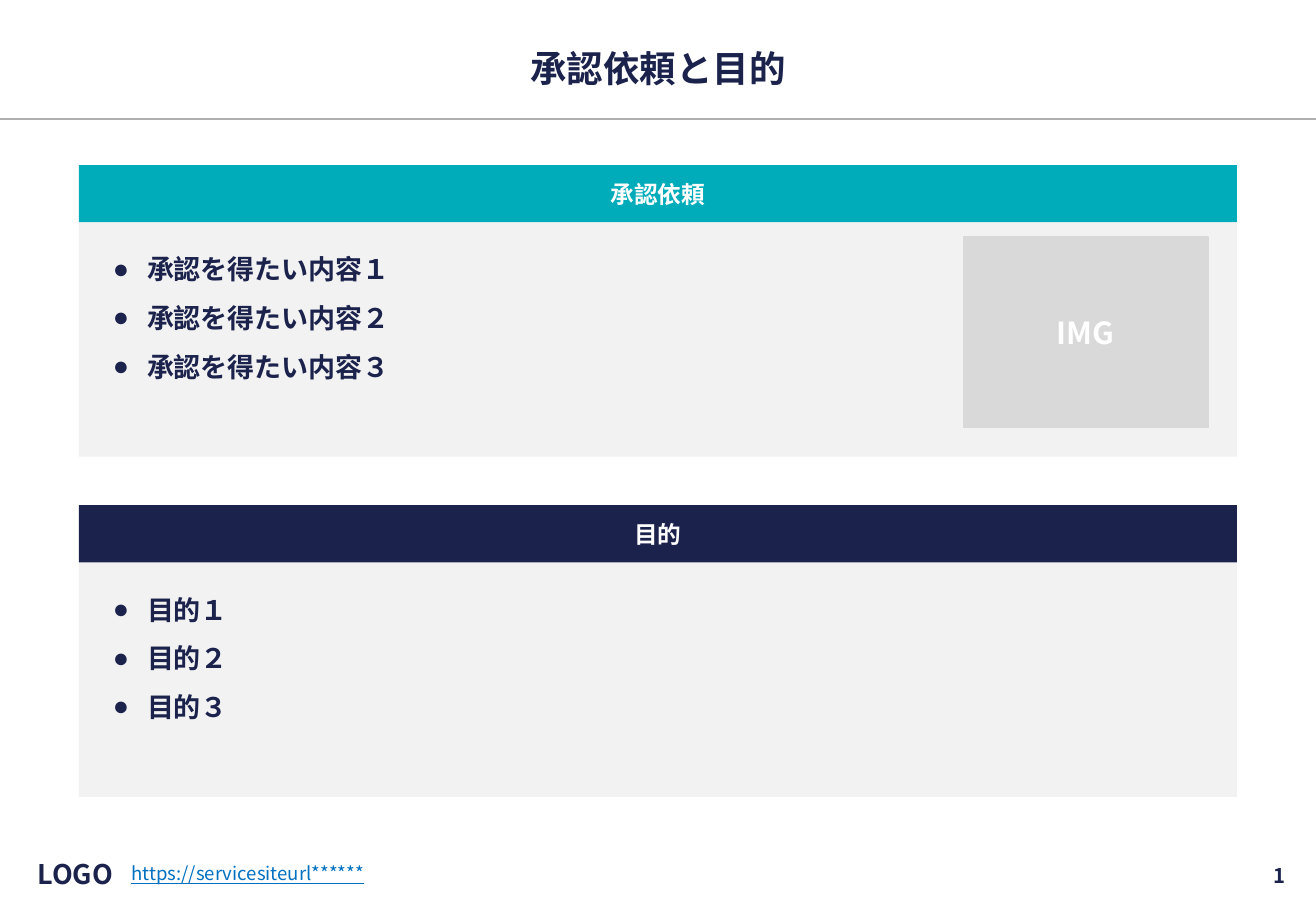
from lxml.etree import SubElement
from pptx import Presentation
from pptx.dml.color import RGBColor
from pptx.enum.shapes import MSO_CONNECTOR, MSO_SHAPE
from pptx.enum.text import MSO_ANCHOR, MSO_AUTO_SIZE, PP_ALIGN
from pptx.oxml import parse_xml
from pptx.oxml.ns import nsdecls, qn
from pptx.util import Pt

PX = 9144  # one hundredth of an inch in EMU
FONT = "Noto Sans CJK JP"
NAVY, TEAL, WHITE = "1B224C", "00ACBA", "FFFFFF"
PANEL, GREY, RULE, LINK = "F2F2F2", "D9D9D9", "AFAFAF", "0070C0"

WIDTH, HEIGHT = 1083, 750
LEFT, CONTENT_WIDTH = 65, 953
HEADER_HEIGHT, PANEL_HEIGHT = 47, 193
SECTION_TOP, SECTION_STEP = 136, 280

SECTIONS = [
    ("承認依頼", TEAL, ["承認を得たい内容１", "承認を得たい内容２", "承認を得たい内容３"]),
    ("目的", NAVY, ["目的１", "目的２", "目的３"]),
]


def px(value):
    return value * PX


def color(value):
    return RGBColor.from_string(value)


def place(shape, left, top, width, height):
    shape.left, shape.top = px(left), px(top)
    shape.width, shape.height = px(width), px(height)


def style(paragraph, size, hex_color, align, bold=True):
    paragraph.alignment = align
    font = paragraph.font
    font.name, font.size, font.bold = FONT, Pt(size), bold
    font.color.rgb = color(hex_color)
    defaults = paragraph._p.pPr.find(qn("a:defRPr"))
    SubElement(defaults, qn("a:ea"), typeface=FONT)


def set_frame(frame, insets, anchor=MSO_ANCHOR.MIDDLE):
    frame.word_wrap = True
    frame.auto_size = MSO_AUTO_SIZE.NONE
    frame.vertical_anchor = anchor
    frame.margin_left, frame.margin_top, frame.margin_right, frame.margin_bottom = map(px, insets)


def add_bullet(paragraph, hex_color):
    properties = paragraph._p.get_or_add_pPr()
    properties.set("marL", str(px(28)))
    properties.set("indent", str(px(-28)))
    defaults = properties.find(qn("a:defRPr"))
    defaults.addprevious(parse_xml(
        f'<a:buClr {nsdecls("a")}><a:srgbClr val="{hex_color}"/></a:buClr>'))
    defaults.addprevious(parse_xml(f'<a:buChar {nsdecls("a")} char="●"/>'))


def add_box(slide, text, box, fill, size):
    shape = slide.shapes.add_shape(MSO_SHAPE.RECTANGLE, *map(px, box))
    shape.shadow.inherit = False
    shape.fill.solid()
    shape.fill.fore_color.rgb = color(fill)
    shape.line.fill.background()
    set_frame(shape.text_frame, (10, 5, 10, 5))
    shape.text_frame.text = text
    style(shape.text_frame.paragraphs[0], size, WHITE, PP_ALIGN.CENTER)
    return shape


def add_label(slide, text, box, size, hex_color, align, insets=(4, 4, 4, 4), bold=True):
    label = slide.shapes.add_textbox(*map(px, box))
    set_frame(label.text_frame, insets)
    label.text_frame.text = text
    style(label.text_frame.paragraphs[0], size, hex_color, align, bold)
    return label


def add_rule(slide, y):
    rule = slide.shapes.add_connector(MSO_CONNECTOR.STRAIGHT, 0, px(y), px(WIDTH), px(y))
    rule.line.color.rgb = color(RULE)
    rule.line.width = Pt(0.75)
    SubElement(rule._element.spPr, qn("a:effectLst"))


def set_title(slide, text):
    title = slide.shapes.title
    place(title, LEFT, 39, CONTENT_WIDTH, 39)
    set_frame(title.text_frame, (4, 4, 4, 4))
    title.text_frame.text = text
    paragraph = title.text_frame.paragraphs[0]
    style(paragraph, 21.6, NAVY, PP_ALIGN.CENTER)
    paragraph.line_spacing = 0.9


def fill_panel(panel, top, items):
    place(panel, LEFT, top, CONTENT_WIDTH, PANEL_HEIGHT)
    panel.fill.solid()
    panel.fill.fore_color.rgb = color(PANEL)
    frame = panel.text_frame
    set_frame(frame, (28, 12, 20, 12), MSO_ANCHOR.TOP)
    frame.text = "\n".join(items)
    for paragraph in frame.paragraphs:
        style(paragraph, 16, NAVY, PP_ALIGN.LEFT)
        paragraph.line_spacing = 1.5
        paragraph.space_before = Pt(0)
        add_bullet(paragraph, NAVY)


def main():
    presentation = Presentation()
    presentation.slide_width, presentation.slide_height = px(WIDTH), px(HEIGHT)
    slide = presentation.slides.add_slide(presentation.slide_layouts.get_by_name("Two Content"))

    # Title band
    add_rule(slide, 98)
    set_title(slide, "承認依頼と目的")

    # Sections: coloured header above a bulleted panel
    panels = list(slide.placeholders)[1:]
    for index, (heading, fill, items) in enumerate(SECTIONS):
        top = SECTION_TOP + index * SECTION_STEP
        add_box(slide, heading, (LEFT, top, CONTENT_WIDTH, HEADER_HEIGHT), fill, 14)
        fill_panel(panels[index], top + HEADER_HEIGHT, items)

    # Image area
    image_area = add_box(slide, "IMG", (793, 195, 201, 157), GREY, 18)
    image_area.line.color.rgb = color(GREY)
    image_area.line.width = Pt(1)

    # Footer
    add_label(slide, "LOGO", (21, 700, 82, 39), 16, NAVY, PP_ALIGN.CENTER)
    address = add_label(slide, "https://servicesiteurl******", (104, 706, 575, 26),
                        11, LINK, PP_ALIGN.LEFT, bold=False)
    address.text_frame.vertical_anchor = MSO_ANCHOR.TOP
    address.text_frame.auto_size = MSO_AUTO_SIZE.SHAPE_TO_FIT_TEXT
    address.text_frame.paragraphs[0].font.underline = True
    add_label(slide, "1", (824, 701, 244, 39), 12, NAVY, PP_ALIGN.RIGHT, (10, 5, 10, 5))

    presentation.save("out.pptx")


if __name__ == "__main__":
    main()
